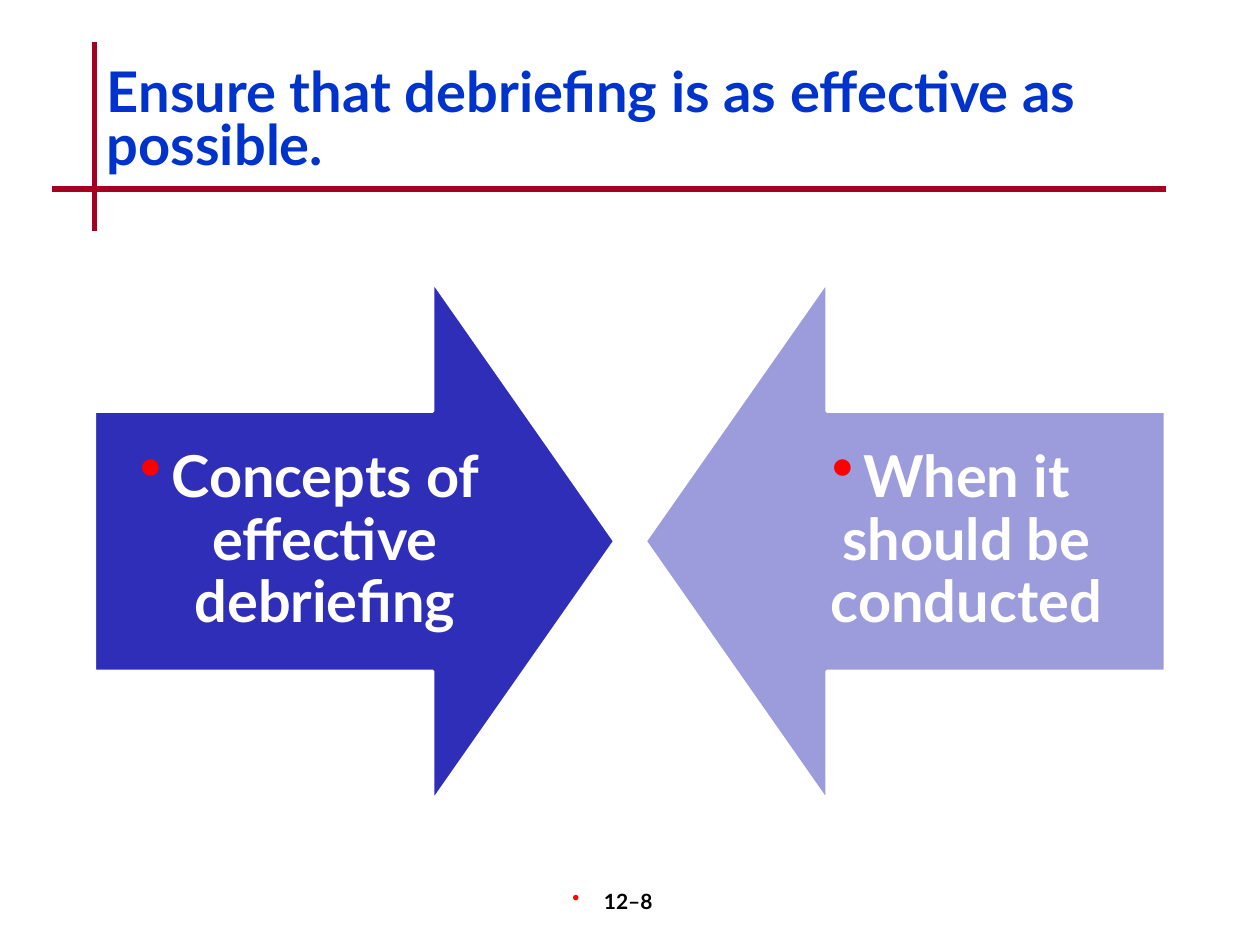
from lxml import etree
from pptx import Presentation
from pptx.dml.color import RGBColor
from pptx.enum import shapes, text
from pptx.oxml import ns
from pptx.util import Pt

FONT = "Lato"
COLORS = {
    "rule": "A50021",
    "title": "0033CC",
    "bullet": "FF0000",
    "concepts": "2E2EB9",
    "timing": "9C9CDD",
    "white": "FFFFFF",
    "black": "000000",
}
MARGIN = 54
CONTENT_WIDTH = 612
ARROW_SIZE = 297.4
ARROW_TOP = 160.6
BULLET_INDENT = 18


def color(name):
    return RGBColor.from_string(COLORS[name])


def add_rule(page, x1, y1, x2, y2):
    rule = page.shapes.add_connector(
        shapes.MSO_CONNECTOR.STRAIGHT, Pt(x1), Pt(y1), Pt(x2), Pt(y2))
    rule.line.color.rgb = color("rule")
    rule.line.width = Pt(3)
    etree.SubElement(rule._element.spPr, ns.qn("a:effectLst"))


def add_bullet(para, size=100):
    """Give the paragraph a red hanging bullet, sized in percent of the text."""
    props = para._p.get_or_add_pPr()
    props.set("marL", str(Pt(BULLET_INDENT)))
    props.set("indent", str(-Pt(BULLET_INDENT)))
    bullet_color = etree.SubElement(props, ns.qn("a:buClr"))
    etree.SubElement(bullet_color, ns.qn("a:srgbClr"), val=COLORS["bullet"])
    etree.SubElement(props, ns.qn("a:buSzPct"), val=str(size * 1000))
    etree.SubElement(props, ns.qn("a:buChar"), char="•")


def style_text(para, size, color_name):
    for span in para.runs:
        span.font.name = FONT
        span.font.size = Pt(size)
        span.font.bold = True
        span.font.color.rgb = color(color_name)


def add_text_box(page, left, top, width, height, words):
    box = page.shapes.add_textbox(Pt(left), Pt(top), Pt(width), Pt(height))
    frame = box.text_frame
    frame.word_wrap = True
    frame.text = words
    return frame


def add_title(page, words):
    frame = add_text_box(page, MARGIN, 36, CONTENT_WIDTH, 72, words)
    para = frame.paragraphs[0]
    para.line_spacing = 0.8
    style_text(para, 32, "title")


def add_arrow(page, kind, left, fill, words):
    arrow = page.shapes.add_shape(
        kind, Pt(left), Pt(ARROW_TOP), Pt(ARROW_SIZE), Pt(ARROW_SIZE))
    arrow.adjustments[0] = 0.5
    arrow.adjustments[1] = 0.35
    arrow.shadow.inherit = False
    arrow.fill.solid()
    arrow.fill.fore_color.rgb = color(fill)
    arrow.line.color.rgb = color("white")
    arrow.line.width = Pt(2)

    frame = arrow.text_frame
    frame.word_wrap = True
    frame.vertical_anchor = text.MSO_ANCHOR.MIDDLE
    frame.margin_left = frame.margin_right = Pt(18.5)
    frame.margin_top = frame.margin_bottom = Pt(18.5)
    frame.text = words
    para = frame.paragraphs[0]
    para.alignment = text.PP_ALIGN.CENTER
    para.line_spacing = 0.9
    add_bullet(para, 110)
    style_text(para, 33, "white")


def add_page_number(page, words):
    frame = add_text_box(page, 282, 504, 150, 36, words)
    frame.margin_left = 0
    frame.margin_right = Pt(14)
    para = frame.paragraphs[0]
    para.alignment = text.PP_ALIGN.CENTER
    add_bullet(para)
    style_text(para, 12, "black")


def main():
    deck = Presentation()
    deck.slide_width, deck.slide_height = Pt(720), Pt(540)
    page = deck.slides.add_slide(deck.slide_layouts[6])

    add_rule(page, MARGIN, 24, MARGIN, 132)
    add_rule(page, 30, 108, MARGIN + CONTENT_WIDTH, 108)
    add_arrow(page, shapes.MSO_SHAPE.RIGHT_ARROW, MARGIN, "concepts",
              "Concepts of effective debriefing")
    add_arrow(page, shapes.MSO_SHAPE.LEFT_ARROW,
              MARGIN + CONTENT_WIDTH - ARROW_SIZE, "timing",
              "When it should be conducted")
    add_title(page, "Ensure that debriefing is as effective as possible.")
    add_page_number(page, "12–8")
    deck.save("out.pptx")


if __name__ == "__main__":
    main()
